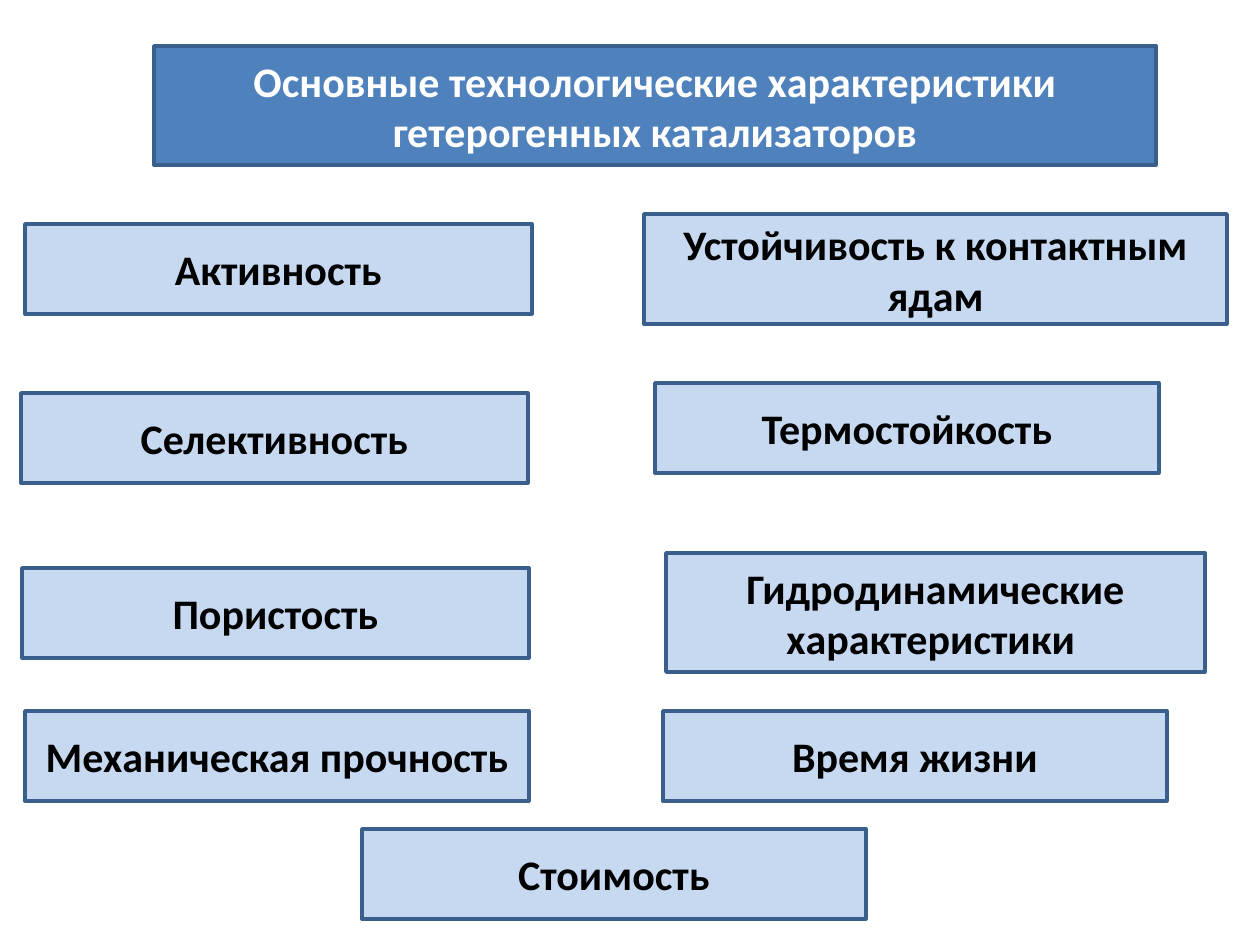
import pptx
import pptx.util
import pptx.dml.color
import pptx.enum.shapes
import pptx.enum.text

EMU_PER_PX = 914400 / 126
COLORS = {
    "title_fill": "4F81BD",
    "title_text": "FFFFFF",
    "item_fill": "C6D9F1",
    "item_text": "000000",
    "border": "3A5F8C",
}
TITLE = "Основные технологические характеристики гетерогенных катализаторов"
CHARACTERISTICS = [
    ("Активность", 25, 224, 507, 90),
    ("Селективность", 21, 393, 507, 90),
    ("Пористость", 22, 568, 507, 90),
    ("Механическая прочность", 25, 711, 504, 90),
    ("Устойчивость к контактным ядам", 644, 214, 583, 110),
    ("Термостойкость", 655, 383, 504, 90),
    ("Гидродинамические характеристики ", 666, 553, 539, 119),
    ("Время жизни", 663, 711, 504, 90),
    ("Стоимость", 362, 829, 504, 90),
]


def px(length):
    return pptx.util.Emu(round(length * EMU_PER_PX))


def rgb(name):
    return pptx.dml.color.RGBColor.from_string(COLORS[name])


def write_text(frame, text, *, color, size=24, bold=True, font="Calibri"):
    frame.word_wrap = True
    frame.vertical_anchor = pptx.enum.text.MSO_ANCHOR.MIDDLE
    paragraph = frame.paragraphs[0]
    paragraph.alignment = pptx.enum.text.PP_ALIGN.CENTER
    run = paragraph.add_run()
    run.text = text
    run.font.name = font
    run.font.size = pptx.util.Pt(size)
    run.font.bold = bold
    run.font.color.rgb = rgb(color)


def add_box(slide, text, left, top, width, height, role="item"):
    box = slide.shapes.add_shape(
        pptx.enum.shapes.MSO_SHAPE.RECTANGLE,
        px(left), px(top), px(width), px(height),
    )
    box.shadow.inherit = False
    box.fill.solid()
    box.fill.fore_color.rgb = rgb(f"{role}_fill")
    box.line.color.rgb = rgb("border")
    box.line.width = pptx.util.Pt(2)
    write_text(box.text_frame, text, color=f"{role}_text")


def main():
    deck = pptx.Presentation()
    deck.slide_width, deck.slide_height = px(1260), px(945)
    slide = deck.slides.add_slide(deck.slide_layouts[6])
    add_box(slide, TITLE, 154, 46, 1002, 119, role="title")
    for characteristic in CHARACTERISTICS:
        add_box(slide, *characteristic)
    deck.save("out.pptx")


if __name__ == "__main__":
    main()
